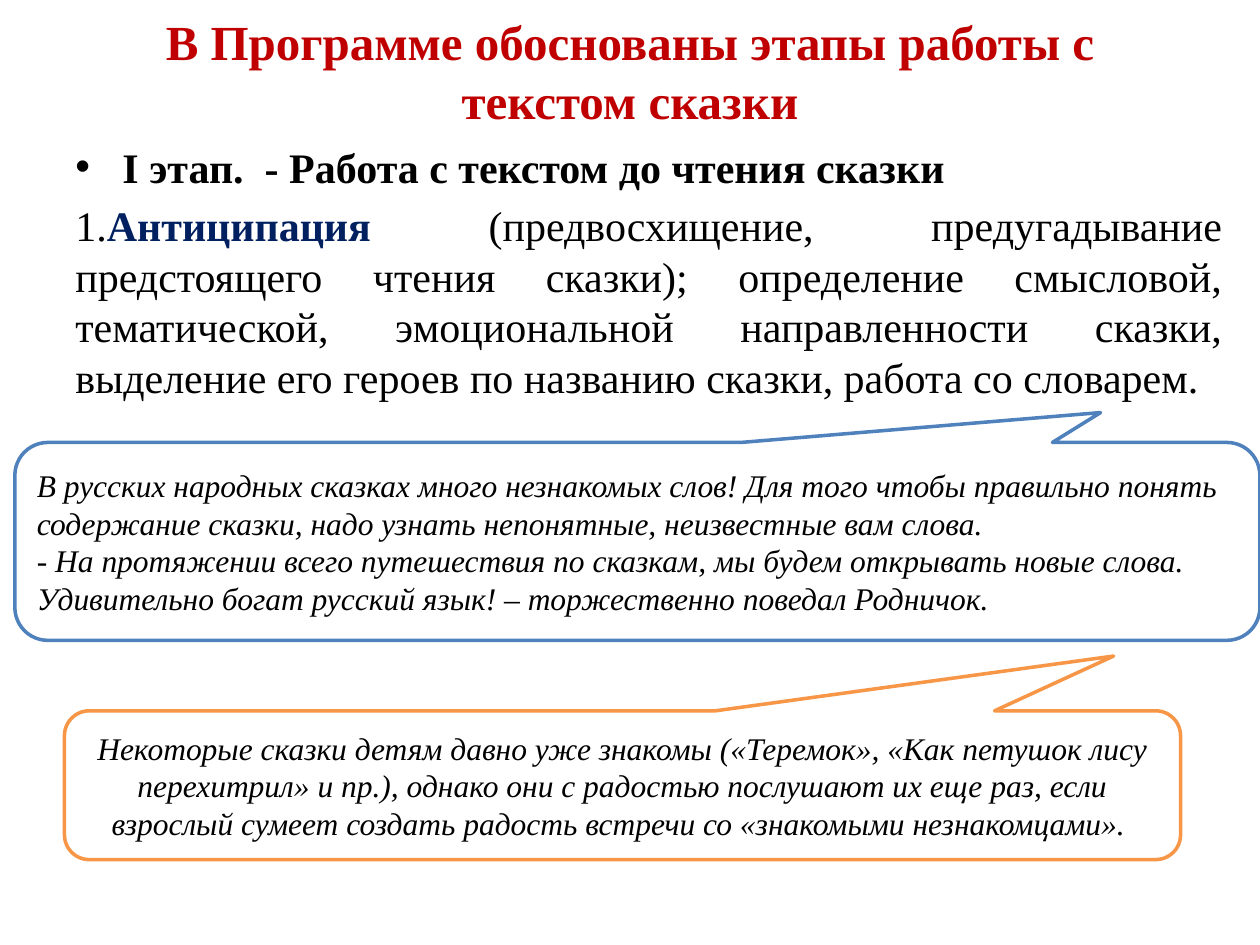
from dataclasses import dataclass

from lxml import etree
from pptx import Presentation
from pptx import util as u
from pptx.dml.color import RGBColor as Rgb
from pptx.enum import shapes, text
from pptx.oxml.ns import qn


@dataclass(frozen=True)
class Theme:
    font: str = "Times New Roman"
    white: str = "FFFFFF"
    black: str = "000000"
    red: str = "C00000"
    navy: str = "002060"
    blue: str = "4F81BD"
    orange: str = "F79646"
    head: int = 28
    body: int = 24
    note: int = 18


@dataclass(frozen=True)
class Box:
    left: float
    top: float
    width: float
    height: float

    def cm(self) -> list[u.Cm]:
        return [u.Cm(n) for n in (self.left, self.top, self.width, self.height)]


@dataclass(frozen=True)
class Callout:
    box: Box
    tip: tuple[float, float]
    line: str
    align: text.PP_ALIGN
    lines: list[str]


T = Theme()
ALIGN = text.PP_ALIGN
MIDDLE = text.MSO_ANCHOR.MIDDLE

NOTES = [
    Callout(Box(0.3, 8.92, 25.1, 3.99), (0.372, -0.651), T.blue, ALIGN.LEFT, [
        "В русских народных сказках много незнакомых слов! Для того чтобы правильно "
        "понять содержание сказки, надо узнать непонятные, неизвестные вам слова.",
        "- На протяжении всего путешествия по сказкам, мы будем открывать новые слова. "
        "Удивительно богат русский язык! – торжественно поведал Родничок.",
    ]),
    Callout(Box(1.3, 14.33, 22.5, 3), (0.44, -0.868), T.orange, ALIGN.CENTER, [
        "Некоторые сказки детям давно уже знакомы («Теремок», «Как петушок лису "
        "перехитрил» и пр.), однако они с радостью послушают их еще раз, если "
        "взрослый сумеет создать радость встречи со «знакомыми незнакомцами». ",
    ]),
]


def write(para, words: str, *, size: int, color: str = T.black,
          bold: bool = False, italic: bool = False) -> None:
    run = para.add_run()
    run.text = words
    font = run.font
    font.name, font.size = T.font, u.Pt(size)
    font.bold, font.italic = bold, italic
    font.color.rgb = Rgb.from_string(color)


def frame(slide, box: Box):
    area = slide.shapes.add_textbox(*box.cm()).text_frame
    area.word_wrap = True
    return area


def bullet(para, indent: u.Cm) -> None:
    props = para._p.get_or_add_pPr()
    props.set("marL", str(indent))
    props.set("indent", str(-indent))
    etree.SubElement(props, qn("a:buFont")).set("typeface", "Arial")
    etree.SubElement(props, qn("a:buChar")).set("char", "•")


def draw(slide, note: Callout) -> None:
    kind = shapes.MSO_SHAPE.ROUNDED_RECTANGULAR_CALLOUT
    shape = slide.shapes.add_shape(kind, *note.box.cm())
    shape.shadow.inherit = False
    shape.adjustments[0], shape.adjustments[1] = note.tip
    shape.fill.solid()
    shape.fill.fore_color.rgb = Rgb.from_string(T.white)
    shape.line.color.rgb = Rgb.from_string(note.line)
    shape.line.width = u.Pt(2)
    area = shape.text_frame
    area.word_wrap = True
    area.vertical_anchor = MIDDLE
    for i, words in enumerate(note.lines):
        para = area.add_paragraph() if i else area.paragraphs[0]
        para.alignment = note.align
        write(para, words, size=T.note, italic=True)


def main() -> None:
    deck = Presentation()
    deck.slide_width, deck.slide_height = u.Cm(25.4), u.Cm(19.05)
    slide = deck.slides.add_slide(deck.slide_layouts[6])

    # Title
    area = frame(slide, Box(1.27, 0.15, 22.86, 2.54))
    area.vertical_anchor = MIDDLE
    head = area.paragraphs[0]
    head.alignment = ALIGN.CENTER
    write(head, "В Программе обоснованы этапы работы с текстом сказки",
          size=T.head, color=T.red, bold=True)

    # Stage and its first step
    area = frame(slide, Box(1.27, 2.72, 23.62, 14.3))
    stage = area.paragraphs[0]
    bullet(stage, u.Cm(0.95))
    write(stage, "I этап.  - Работа с текстом до чтения сказки", size=T.body, bold=True)
    step = area.add_paragraph()
    step.alignment = ALIGN.JUSTIFY
    step.space_before = u.Pt(0.2 * T.body)
    write(step, "1.", size=T.body)
    write(step, "Антиципация", size=T.body, color=T.navy, bold=True)
    write(step, " (предвосхищение, предугадывание предстоящего чтения сказки); "
          "определение смысловой, тематической, эмоциональной направленности сказки, "
          "выделение его героев по названию сказки, работа со словарем.", size=T.body)

    # Callouts
    for note in NOTES:
        draw(slide, note)

    deck.save("out.pptx")


if __name__ == "__main__":
    main()
